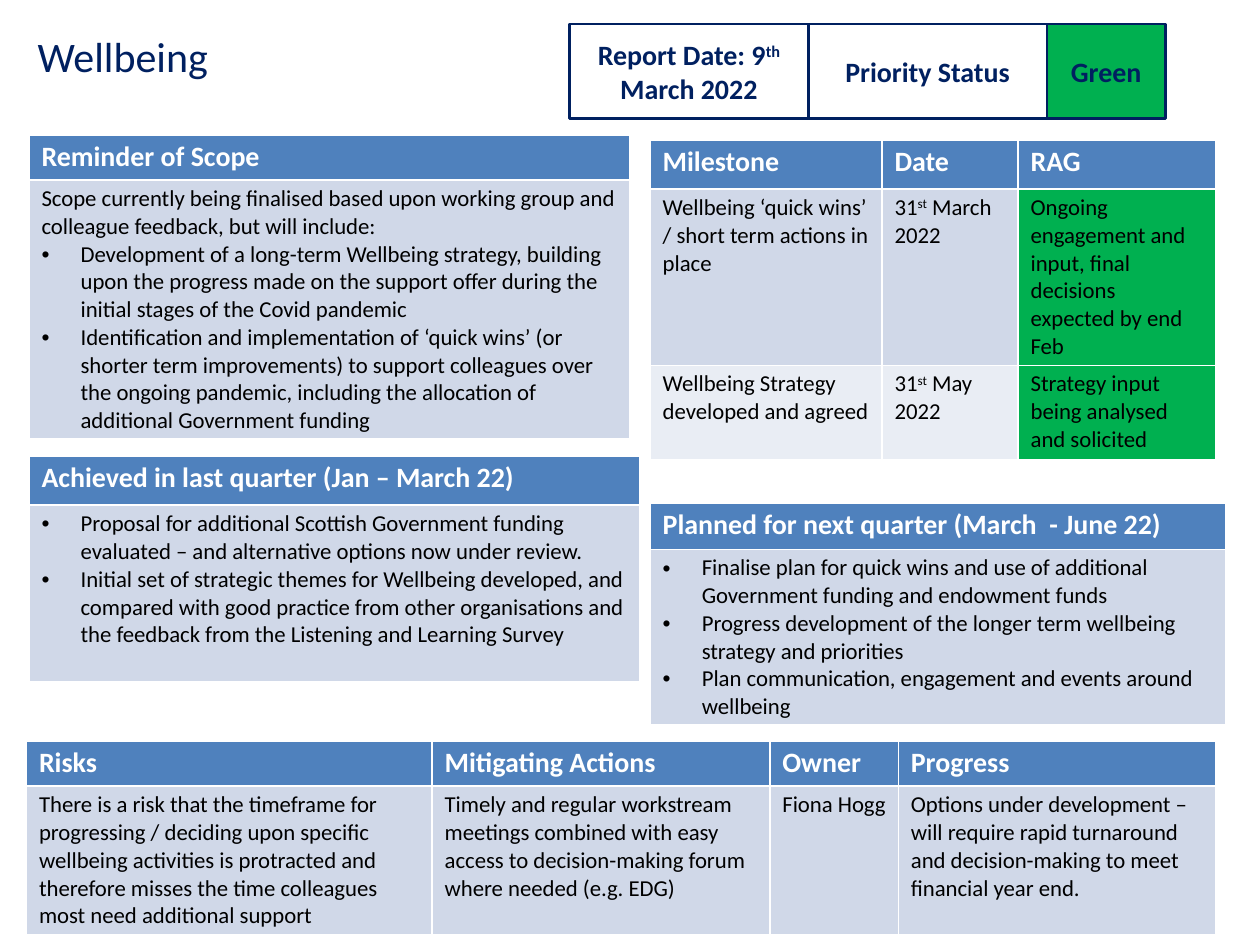
"""Build the one-page Wellbeing status report."""
from dataclasses import dataclass
from itertools import accumulate

from lxml import etree
from pptx import Presentation
from pptx import util as u
from pptx.dml.color import RGBColor
from pptx.enum import shapes, text
from pptx.oxml.ns import qn

FONT = "Calibri"
COLOURS = {
    "navy": "002060",
    "blue": "4F81BD",
    "pale": "D0D8E8",
    "paler": "E9EDF4",
    "green": "00B050",
    "white": "FFFFFF",
    "black": "000000",
}
COLUMNS, ROWS = 100, 75
BULLET = "• "
RAISED = "^"


@dataclass(frozen=True)
class Style:
    size: int
    colour: str
    bold: bool = False
    centred: bool = False


TITLE = Style(24, "navy")
STATUS = Style(16, "navy", bold=True, centred=True)
HEADING = Style(16, "white", bold=True)
BODY = Style(13, "black")


@dataclass(frozen=True)
class StatusBox:
    words: str
    columns: float
    fill: str | None = None


@dataclass(frozen=True)
class Panel:
    left: float
    top: float
    columns: tuple[float, ...]
    rows: tuple[float, ...]
    cells: tuple[tuple[str, ...], ...]
    rag_column: int | None = None


STATUS_BOXES = (
    StatusBox("Report Date: 9^th^ March 2022", 18.95),
    StatusBox("Priority Status", 18.95),
    StatusBox("Green", 9.4, "green"),
)

PANELS = (
    Panel(2.3, 10.7, (47.7,), (3.6, 20.5), (
        ("Reminder of Scope",),
        ("Scope currently being finalised based upon working group and colleague "
         "feedback, but will include:\n"
         "• Development of a long-term Wellbeing strategy, building upon the progress "
         "made on the support offer during the initial stages of the Covid pandemic\n"
         "• Identification and implementation of ‘quick wins’ (or shorter term "
         "improvements) to support colleagues over the ongoing pandemic, including "
         "the allocation of additional Government funding",),
    )),
    Panel(2.3, 36.2, (48.5,), (3.9, 14), (
        ("Achieved in last quarter (Jan – March 22)",),
        ("• Proposal for additional Scottish Government funding evaluated – and "
         "alternative options now under review.\n"
         "• Initial set of strategic themes for Wellbeing developed, and compared with "
         "good practice from other organisations and the feedback from the Listening "
         "and Learning Survey",),
    )),
    Panel(51.6, 11.1, (18.4, 10.8, 15.7), (3.9, 14, 7.5), (
        ("Milestone", "Date", "RAG"),
        ("Wellbeing ‘quick wins’ / short term actions in place", "31^st^ March 2022",
         "Ongoing engagement and input, final decisions expected by end Feb"),
        ("Wellbeing Strategy developed and agreed", "31^st^ May 2022",
         "Strategy input being analysed and solicited"),
    ), rag_column=2),
    Panel(51.6, 39.9, (45.7,), (3.7, 13.9), (
        ("Planned for next quarter (March  - June 22)",),
        ("• Finalise plan for quick wins and use of additional Government funding and "
         "endowment funds\n"
         "• Progress development of the longer term wellbeing strategy and priorities\n"
         "• Plan communication, engagement and events around wellbeing",),
    )),
    Panel(2.1, 58.8, (32.2, 26.8, 10.2, 25.2), (3.6, 11.8), (
        ("Risks", "Mitigating Actions", "Owner", "Progress"),
        ("There is a risk that the timeframe for progressing / deciding upon specific "
         "wellbeing activities is protracted and therefore misses the time colleagues "
         "most need additional support",
         "Timely and regular workstream meetings combined with easy access to "
         "decision-making forum where needed (e.g. EDG)",
         "Fiona Hogg",
         "Options under development – will require rapid turnaround and "
         "decision-making to meet financial year end."),
    )),
)

presentation = Presentation()
presentation.slide_width, presentation.slide_height = u.Inches(10), u.Inches(7.5)


def across(columns: float) -> int:
    return round(presentation.slide_width * columns / COLUMNS)


def down(rows: float) -> int:
    return round(presentation.slide_height * rows / ROWS)


def paint(fill, colour: str) -> None:
    fill.solid()
    fill.fore_color.rgb = RGBColor.from_string(COLOURS[colour])


def add_bullet(paragraph) -> None:
    properties = paragraph._p.get_or_add_pPr()
    indent = u.Inches(0.31)
    properties.set("marL", str(indent))
    properties.set("indent", str(-indent))
    font = etree.Element(qn("a:buFont"), typeface="Arial")
    mark = etree.Element(qn("a:buChar"), char=BULLET.strip())
    properties.insert(0, font)
    properties.insert(1, mark)


def write(frame, words: str, style: Style) -> None:
    frame.word_wrap = True
    for index, line in enumerate(words.split("\n")):
        paragraph = frame.add_paragraph() if index else frame.paragraphs[0]
        paragraph.alignment = text.PP_ALIGN.CENTER if style.centred else text.PP_ALIGN.LEFT
        paragraph.font.name = FONT
        paragraph.font.size = u.Pt(style.size)
        paragraph.font.bold = style.bold
        paragraph.font.color.rgb = RGBColor.from_string(COLOURS[style.colour])
        if line.startswith(BULLET):
            add_bullet(paragraph)
        for part, piece in enumerate(line.removeprefix(BULLET).split(RAISED)):
            run = paragraph.add_run()
            run.text = piece
            if part % 2:
                run.font._element.set("baseline", "30000")


def add_status_box(slide, box: StatusBox, left: float) -> None:
    shape = slide.shapes.add_shape(
        shapes.MSO_SHAPE.RECTANGLE, across(left), down(1.9), across(box.columns), down(7.5))
    shape.shadow.inherit = False
    if box.fill:
        paint(shape.fill, box.fill)
    else:
        shape.fill.background()
    paint(shape.line.fill, "navy")
    shape.line.width = u.Pt(1.5)
    shape.text_frame.vertical_anchor = text.MSO_ANCHOR.MIDDLE
    write(shape.text_frame, box.words, STATUS)


def add_panel(slide, panel: Panel) -> None:
    table = slide.shapes.add_table(
        len(panel.rows), len(panel.columns), across(panel.left), down(panel.top),
        across(sum(panel.columns)), down(sum(panel.rows))).table
    for column, width in zip(table.columns, panel.columns):
        column.width = across(width)
    for row, height in zip(table.rows, panel.rows):
        row.height = down(height)
    for row, line in enumerate(panel.cells):
        for column, words in enumerate(line):
            cell = table.cell(row, column)
            cell.margin_top = cell.margin_bottom = u.Inches(0.04)
            band = "blue" if row == 0 else ("paler", "pale")[row % 2]
            paint(cell.fill, "green" if row and column == panel.rag_column else band)
            write(cell.text_frame, words, BODY if row else HEADING)


def main() -> None:
    slide = presentation.slides.add_slide(presentation.slide_layouts[6])
    title = slide.shapes.add_textbox(across(2), down(1.9), across(92.9), down(5))
    write(title.text_frame, "Wellbeing", TITLE)
    lefts = accumulate((box.columns for box in STATUS_BOXES), initial=45.2)
    for box, left in zip(STATUS_BOXES, lefts):
        add_status_box(slide, box, left)
    for panel in PANELS:
        add_panel(slide, panel)
    presentation.save("out.pptx")


if __name__ == "__main__":
    main()
